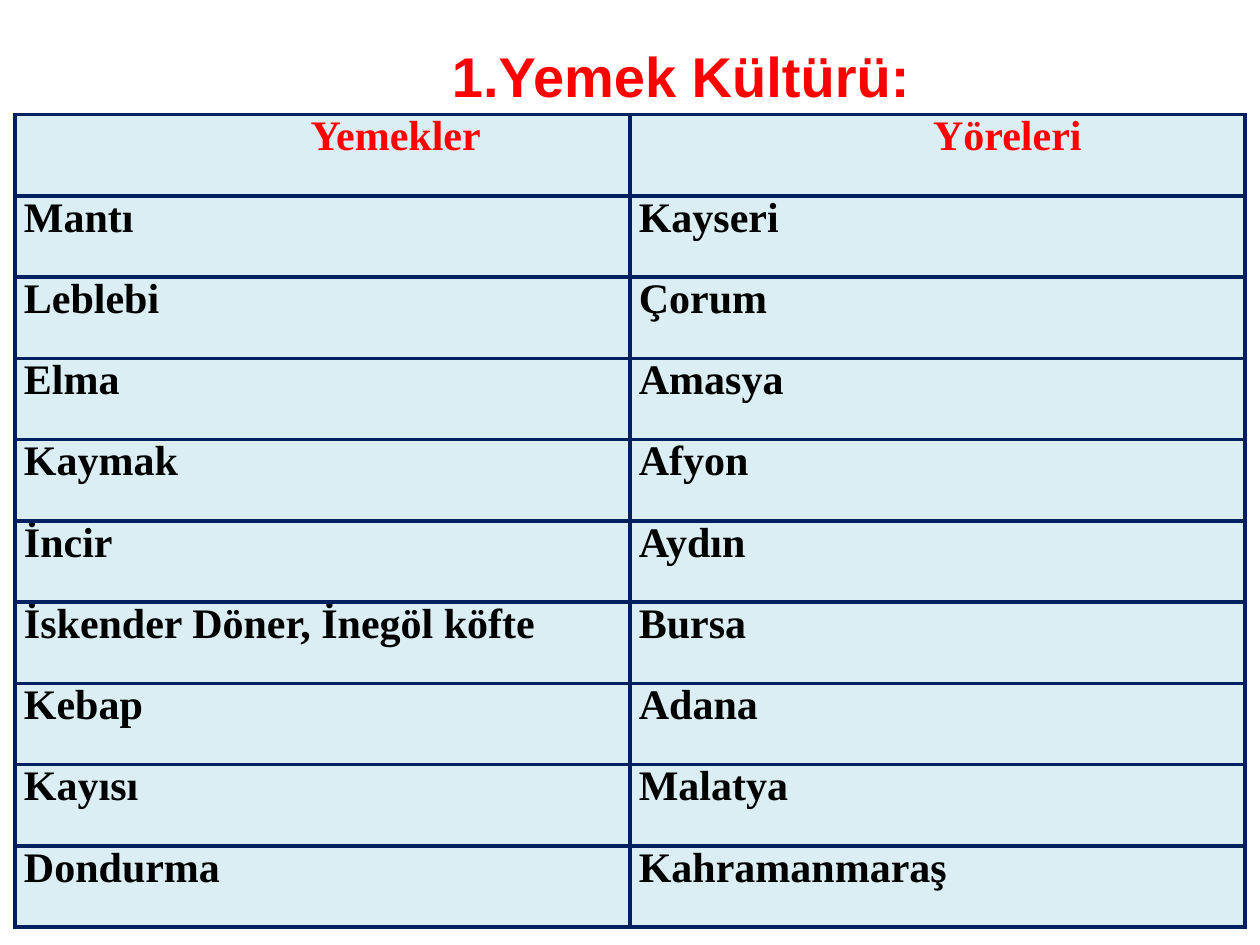
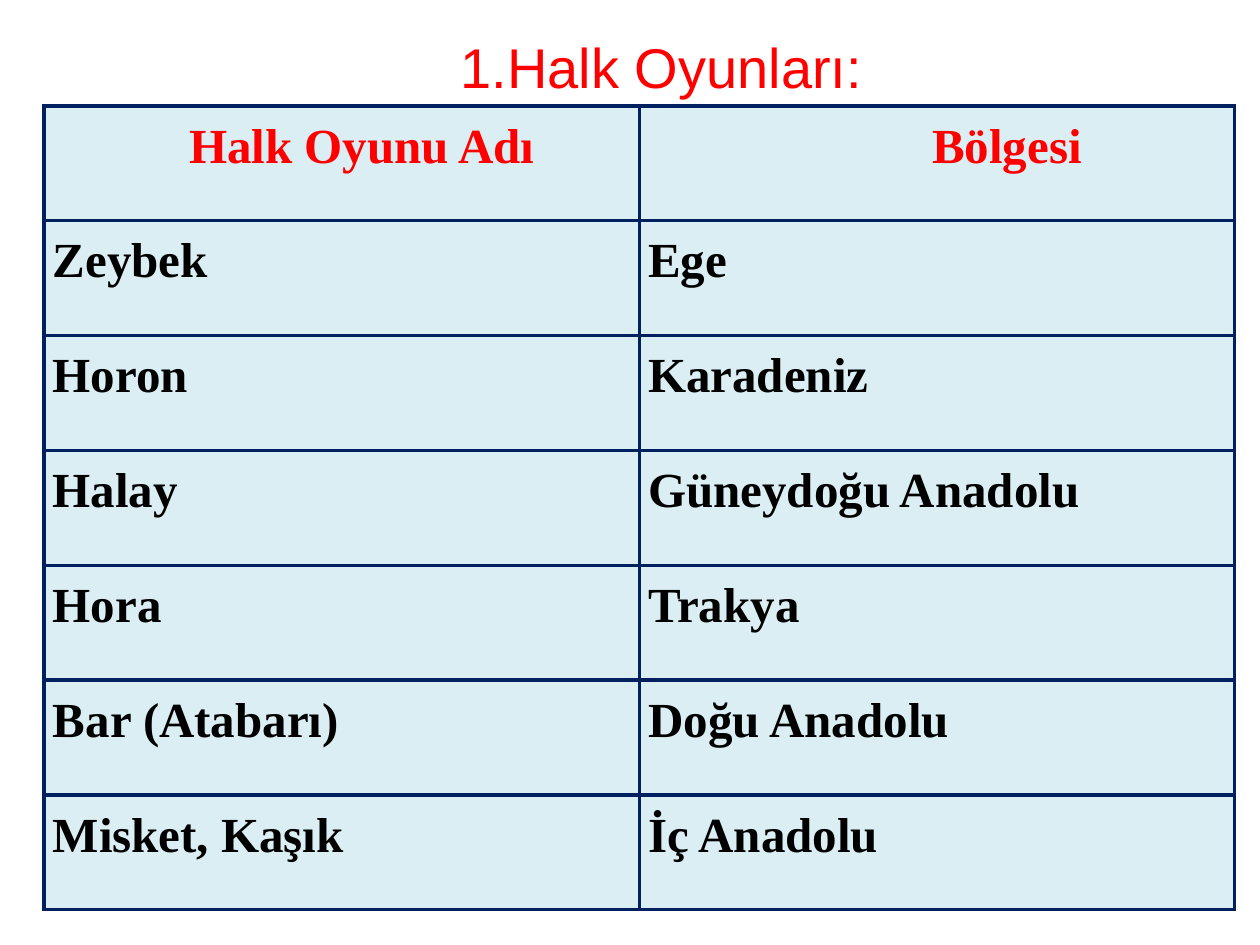
import pptx
import pptx.util
import pptx.dml.color
import pptx.enum.text
import pptx.oxml
import pptx.oxml.ns

Inches, Pt = pptx.util.Inches, pptx.util.Pt
ALIGN = pptx.enum.text.PP_ALIGN
COLORS = {"accent": "FF0000", "body": "000000", "cell": "DAEEF3", "border": "002060"}
LINE_SPACING = 12.9
BODY_INDENT = 0.07

topics = [
    {
        "title": "Yemek Kültürü:", "title_box": (0.98, 0.28, 8.35, 0.64), "title_bold": True,
        "table_box": (0.12, 0.91, 9.76, 6.45), "size": 24, "lines_above": 1,
        "headers": [("Yemekler", ALIGN.CENTER, 1.16), ("Yöreleri", ALIGN.CENTER, 1.11)],
        "pairs": [
            ("Mantı", "Kayseri"),
            ("Leblebi", "Çorum"),
            ("Elma", "Amasya"),
            ("Kaymak", "Afyon"),
            ("İncir", "Aydın"),
            ("İskender Döner, İnegöl köfte", "Bursa"),
            ("Kebap", "Adana"),
            ("Kayısı", "Malatya"),
            ("Dondurma", "Kahramanmaraş"),
        ],
    },
    {
        "title": "Halk Oyunları:", "title_box": (0, 0.21, 10, 0.94), "title_bold": False,
        "table_box": (0.35, 0.84, 9.45, 6.38), "size": 28, "lines_above": 2,
        "headers": [("Halk Oyunu Adı", ALIGN.LEFT, 1.15), ("Bölgesi", ALIGN.CENTER, 1.11)],
        "pairs": [
            ("Zeybek", "Ege"),
            ("Horon", "Karadeniz"),
            ("Halay", "Güneydoğu Anadolu"),
            ("Hora", "Trakya"),
            ("Bar (Atabarı)", "Doğu Anadolu"),
            ("Misket, Kaşık", "İç Anadolu"),
        ],
    },
]


def format_paragraph(paragraph, align, indent, font_name, size, bold, color):
    paragraph.alignment = align
    properties = paragraph._p.get_or_add_pPr()
    properties.set("marL", str(Inches(indent)))
    properties.set("indent", "0")
    font = paragraph.font
    font.name, font.size, font.bold = font_name, Pt(size), bold
    font.color.rgb = pptx.dml.color.RGBColor.from_string(COLORS[color])


def add_borders(cell):
    properties = cell._tc.get_or_add_tcPr()
    for position, side in enumerate(("lnL", "lnR", "lnT", "lnB")):
        properties.insert(position, pptx.oxml.parse_xml(
            f'<a:{side} {pptx.oxml.ns.nsdecls("a")} w="{Pt(2.25)}"><a:solidFill>'
            f'<a:srgbClr val="{COLORS["border"]}"/></a:solidFill></a:{side}>'))


presentation = pptx.Presentation()
presentation.slide_width, presentation.slide_height = Inches(10), Inches(7.5)

for topic in topics:
    slide = presentation.slides.add_slide(presentation.slide_layouts[5])

    heading = slide.shapes.title
    heading.left, heading.top, heading.width, heading.height = map(Inches, topic["title_box"])
    heading.text_frame.text = topic["title"]
    heading.text_frame.word_wrap = True
    heading.text_frame.auto_size = pptx.enum.text.MSO_AUTO_SIZE.NONE
    heading.text_frame.vertical_anchor = pptx.enum.text.MSO_ANCHOR.TOP
    title_line = heading.text_frame.paragraphs[0]
    title_line.level = 1
    title_line.line_spacing = 1.0
    title_line.space_before = Pt(0)
    format_paragraph(title_line, ALIGN.CENTER, 0.5, "Arial", 32, topic["title_bold"], "accent")
    numbering = (f'<a:buClr {pptx.oxml.ns.nsdecls("a")}><a:srgbClr val="{COLORS["accent"]}"/></a:buClr>',
                 f'<a:buAutoNum {pptx.oxml.ns.nsdecls("a")} type="arabicPeriod"/>')
    default_font = title_line._p.pPr.find(pptx.oxml.ns.qn("a:defRPr"))
    for element in numbering:
        default_font.addprevious(pptx.oxml.parse_xml(element))

    body_rows = [[(text, ALIGN.LEFT, BODY_INDENT) for text in pair] for pair in topic["pairs"]]
    rows = [topic["headers"]] + body_rows
    regions = slide.shapes.add_table(len(rows), 2, *map(Inches, topic["table_box"])).table
    regions.first_row = regions.horz_banding = False

    for row_index, row in enumerate(rows):
        for column_index, (text, align, indent) in enumerate(row):
            cell = regions.cell(row_index, column_index)
            cell.text = text
            cell.margin_left = cell.margin_right = cell.margin_bottom = 0
            cell.margin_top = Pt(LINE_SPACING * topic["lines_above"])
            cell.fill.solid()
            cell.fill.fore_color.rgb = pptx.dml.color.RGBColor.from_string(COLORS["cell"])
            add_borders(cell)
            entry = cell.text_frame.paragraphs[0]
            entry.line_spacing = Pt(LINE_SPACING)
            format_paragraph(entry, align, indent, "Times New Roman", topic["size"], True,
                             "body" if row_index else "accent")

presentation.save("out.pptx")
